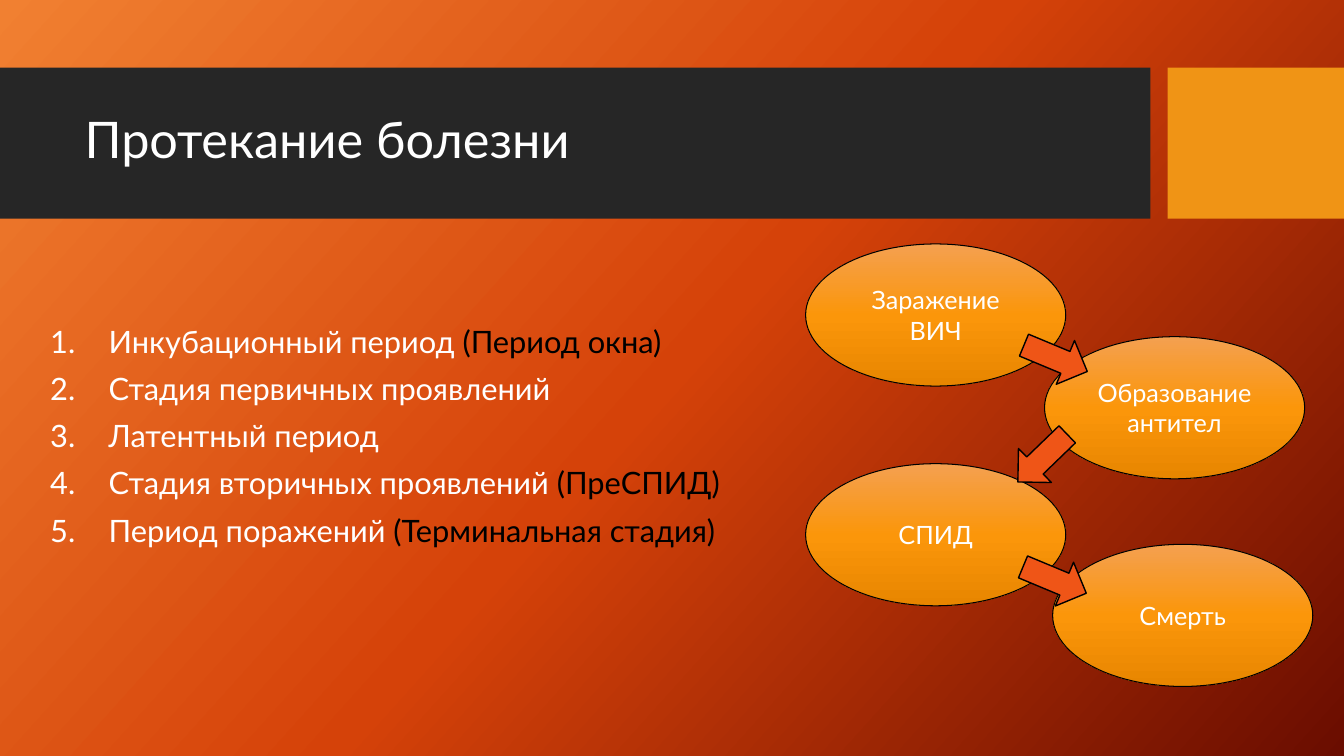
from typing import NamedTuple

from lxml.etree import SubElement
from pptx import Presentation
from pptx.dml.color import RGBColor
from pptx.enum.shapes import MSO_SHAPE
from pptx.enum.text import MSO_ANCHOR, PP_ALIGN
from pptx.oxml.ns import qn
from pptx.util import Inches, Pt

FONT = "Lato"
WHITE = RGBColor(0xFF, 0xFF, 0xFF)
BLACK = RGBColor(0x00, 0x00, 0x00)
CHARCOAL = RGBColor(0x26, 0x26, 0x26)
AMBER = RGBColor(0xF0, 0x94, 0x15)
ARROW_ORANGE = RGBColor(0xEF, 0x55, 0x17)
BACKGROUND_STOPS = (RGBColor(0xF1, 0x80, 0x31), RGBColor(0xD5, 0x42, 0x09),
                    RGBColor(0x6A, 0x0D, 0x00))
STAGE_STOPS = (RGBColor(0xF4, 0xA0, 0x50), RGBColor(0xFB, 0x96, 0x0A),
               RGBColor(0xE8, 0x86, 0x00))


class Period(NamedTuple):
    name: str
    note: str = ""


class Stage(NamedTuple):
    label: str
    left: float
    top: float


class Arrow(NamedTuple):
    left: float
    top: float
    rotation: float


PERIODS = [
    Period("Инкубационный период ", "(Период окна)"),
    Period("Стадия первичных проявлений"),
    Period("Латентный период"),
    Period("Стадия вторичных проявлений ", "(ПреСПИД)"),
    Period("Период поражений ", "(Терминальная стадия)"),
]
STAGES = [
    Stage("Заражение ВИЧ", 7.99, 2.42),
    Stage("Образование антител", 10.36, 3.34),
    Stage("СПИД", 7.99, 4.6),
    Stage("Смерть", 10.44, 5.4),
]
ARROWS = [Arrow(10.13, 3.32, 22.6), Arrow(10.12, 5.52, 22.6), Arrow(10, 4.31, 136)]


def set_gradient(fill, element, stops: tuple, angle: int) -> None:
    """Spread the stops evenly along a clockwise angle; element holds the fill."""
    fill.gradient()
    gradient = element.find(".//" + qn("a:gradFill"))
    stop_list = gradient.find(qn("a:gsLst"))
    for stop in list(stop_list):
        stop_list.remove(stop)
    for index, color in enumerate(stops):
        position = index * 100000 // (len(stops) - 1)
        stop = SubElement(stop_list, qn("a:gs"), pos=str(position))
        SubElement(stop, qn("a:srgbClr"), val=str(color))
    gradient.find(qn("a:lin")).set("ang", str(angle * 60000))


def add_plain_shape(slide, kind, left: float, top: float, width: float, height: float,
                    color=None, line_width: float = 0):
    shape = slide.shapes.add_shape(kind, Inches(left), Inches(top),
                                   Inches(width), Inches(height))
    shape.shadow.inherit = False
    if color is not None:
        shape.fill.solid()
        shape.fill.fore_color.rgb = color
    if line_width:
        shape.line.color.rgb = BLACK
        shape.line.width = Pt(line_width)
    else:
        shape.line.fill.background()
    return shape


def add_text_frame(slide, left: float, top: float, width: float, height: float):
    frame = slide.shapes.add_textbox(Inches(left), Inches(top),
                                     Inches(width), Inches(height)).text_frame
    frame.word_wrap = True
    return frame


def set_font(paragraph, size: int) -> None:
    paragraph.font.name = FONT
    paragraph.font.size = Pt(size)
    paragraph.font.color.rgb = WHITE


def add_title(slide) -> None:
    frame = add_text_frame(slide, 0.74, 0.82, 10.51, 1.18)
    frame.vertical_anchor = MSO_ANCHOR.MIDDLE
    title = frame.paragraphs[0]
    title.text = "Протекание болезни"
    title.line_spacing = 0.9
    set_font(title, 36)


def add_periods(slide) -> None:
    frame = add_text_frame(slide, 0.4, 3.19, 7.46, 4.09)
    for index, period in enumerate(PERIODS):
        paragraph = frame.add_paragraph() if index else frame.paragraphs[0]
        paragraph.alignment = PP_ALIGN.JUSTIFY
        paragraph.line_spacing = 0.9
        if index:
            paragraph.space_before = Pt(10)
        properties = paragraph._p.get_or_add_pPr()
        properties.set("marL", str(Inches(0.58)))
        properties.set("indent", str(-Inches(0.58)))
        SubElement(properties, qn("a:buFont"), typeface=FONT)
        SubElement(properties, qn("a:buAutoNum"), type="arabicPeriod")
        set_font(paragraph, 22)
        paragraph.add_run().text = period.name
        if period.note:
            note = paragraph.add_run()
            note.text = period.note
            note.font.color.rgb = BLACK


def add_stage(slide, stage: Stage) -> None:
    ellipse = add_plain_shape(slide, MSO_SHAPE.OVAL, stage.left, stage.top,
                              2.58, 1.41, line_width=0.75)
    set_gradient(ellipse.fill, ellipse.element, STAGE_STOPS, 90)
    frame = ellipse.text_frame
    frame.word_wrap = True
    frame.vertical_anchor = MSO_ANCHOR.MIDDLE
    label = frame.paragraphs[0]
    label.text = stage.label
    label.alignment = PP_ALIGN.CENTER
    set_font(label, 18)


def main() -> None:
    presentation = Presentation()
    presentation.slide_width = Inches(13.33)
    presentation.slide_height = Inches(7.5)
    slide = presentation.slides.add_slide(presentation.slide_layouts[6])
    set_gradient(slide.background.fill, slide.element, BACKGROUND_STOPS, 42)

    add_plain_shape(slide, MSO_SHAPE.RECTANGLE, 0, 0.67, 11.41, 1.5, CHARCOAL)
    add_plain_shape(slide, MSO_SHAPE.RECTANGLE, 11.58, 0.67, 1.75, 1.5, AMBER)
    add_title(slide)
    add_periods(slide)
    for stage in STAGES:
        add_stage(slide, stage)
    for arrow in ARROWS:
        pointer = add_plain_shape(slide, MSO_SHAPE.RIGHT_ARROW, arrow.left, arrow.top,
                                  0.68, 0.47, ARROW_ORANGE, 1)
        pointer.rotation = arrow.rotation
    presentation.save("out.pptx")


if __name__ == "__main__":
    main()
